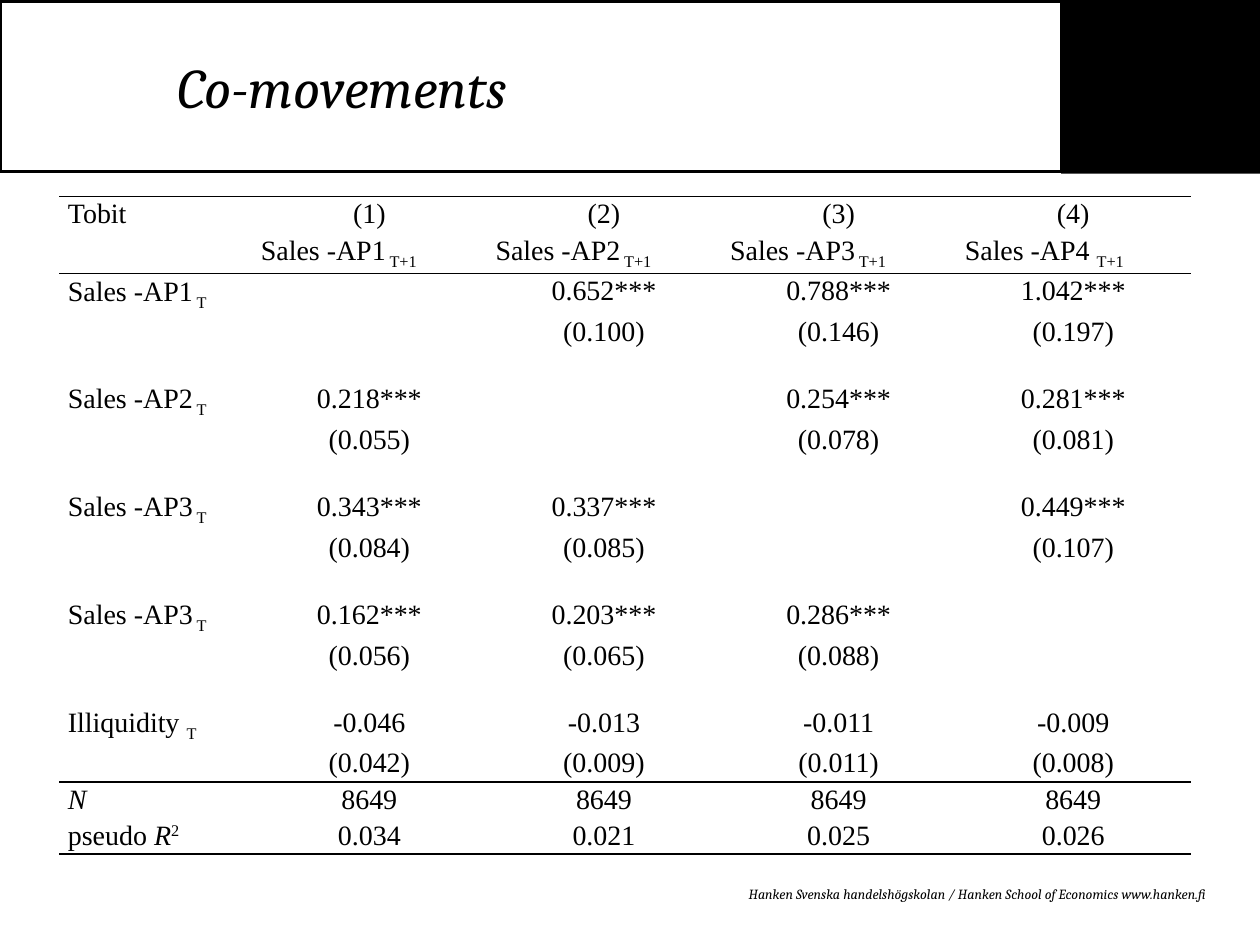
"""Build the Co-movements slide with its Tobit regression table."""
from lxml.etree import SubElement
from pptx import Presentation
from pptx.dml.color import RGBColor
from pptx.enum.shapes import MSO_SHAPE as Shape
from pptx.enum.text import MSO_ANCHOR as Anchor, PP_ALIGN as Align
from pptx.oxml import parse_xml
from pptx.oxml.ns import nsdecls, qn
from pptx.util import Cm, Pt

BLACK = "000000"
SERIF = "Times New Roman"
PLAIN_STYLE = "{2D5ABB26-0587-4C30-8999-92F81FD0307C}"
BASELINES = {"sub": "-25000", "super": "30000"}

HEADINGS = ["Tobit", "(1)", "(2)", "(3)", "(4)"]
OUTCOMES = [("Sales -AP1", " T+1"), ("Sales -AP2", " T+1"),
            ("Sales -AP3", " T+1"), ("Sales -AP4 ", "T+1")]
EFFECTS = [
    (("Sales -AP1", " T"), ["", "0.652***", "0.788***", "1.042***"],
     ["", "(0.100)", "(0.146)", "(0.197)"]),
    (("Sales -AP2", " T"), ["0.218***", "", "0.254***", "0.281***"],
     ["(0.055)", "", "(0.078)", "(0.081)"]),
    (("Sales -AP3", " T"), ["0.343***", "0.337***", "", "0.449***"],
     ["(0.084)", "(0.085)", "", "(0.107)"]),
    (("Sales -AP3", " T"), ["0.162***", "0.203***", "0.286***", ""],
     ["(0.056)", "(0.065)", "(0.088)", ""]),
    (("Illiquidity ", "T"), ["-0.046", "-0.013", "-0.011", "-0.009"],
     ["(0.042)", "(0.009)", "(0.011)", "(0.008)"]),
]
SUMMARY = [
    [[("N", "italic")], "8649", "8649", "8649", "8649"],
    [[("pseudo ", ""), ("R", "italic"), ("2", "super")],
     "0.034", "0.021", "0.025", "0.026"],
]
HEIGHTS = {"heading": 0.73, "outcome": 0.8, "effect": 0.82,
           "error": 0.73, "gap": 0.62, "summary": 0.72}


def color(code):
    return RGBColor.from_string(code)


def write(frame, text, size=16, font=SERIF, italic=False, align=Align.LEFT, spacing=None):
    para = frame.paragraphs[0]
    para.alignment = align
    para.line_spacing = spacing
    for words, style in [(text, "")] if isinstance(text, str) else text:
        span = para.add_run()
        span.text = words
        span.font.size = Pt(size)
        span.font.name = font
        span.font.italic = italic or style == "italic"
        span.font.color.rgb = color(BLACK)
        if style in BASELINES:
            span.font._element.set("baseline", BASELINES[style])


def add_box(page, text, place, anchor=Anchor.TOP, inset=None, **format):
    frame = page.shapes.add_textbox(*map(Cm, place)).text_frame
    frame.word_wrap = True
    frame.vertical_anchor = anchor
    if inset is not None:
        frame.margin_left = frame.margin_right = Cm(inset)
        frame.margin_top = frame.margin_bottom = Cm(inset)
    write(frame, text, **format)


def add_band(page, place, fill=None, line=None):
    band = page.shapes.add_shape(Shape.RECTANGLE, *map(Cm, place))
    band.shadow.inherit = False
    if fill:
        band.fill.solid()
        band.fill.fore_color.rgb = color(fill)
    else:
        band.fill.background()
    if line:
        band.line.color.rgb = color(BLACK)
        band.line.width = Pt(line)
    else:
        band.line.fill.background()


def add_borders(cell, ruled):
    props = cell._tc.get_or_add_tcPr()
    for index, side in enumerate(("lnL", "lnR", "lnT", "lnB")):
        paint = (f'<a:solidFill><a:srgbClr val="{BLACK}"/></a:solidFill>'
                 if side in ruled else "<a:noFill/>")
        props.insert(index, parse_xml(
            f'<a:{side} {nsdecls("a")} w="{Pt(1)}">{paint}</a:{side}>'))


def subscripted(pair):
    return [(pair[0], ""), (pair[1], "sub")]


def table_rows():
    rows = [("heading", HEADINGS),
            ("outcome", [""] + [subscripted(pair) for pair in OUTCOMES])]
    for label, values, errors in EFFECTS:
        rows += [("effect", [subscripted(label)] + values),
                 ("error", [""] + errors), ("gap", [""] * 5)]
    return rows[:-1] + [("summary", row) for row in SUMMARY]


def add_results(page):
    rows = table_rows()
    height = sum(HEIGHTS[kind] for kind, _ in rows)
    frame = page.shapes.add_table(len(rows), 5, Cm(1.19), Cm(3.96), Cm(22.81), Cm(height))
    table = frame.table
    table.first_row = table.horz_banding = False
    table._tbl.tblPr.find(qn("a:tableStyleId")).text = PLAIN_STYLE
    for index, column in enumerate(table.columns):
        column.width = Cm(4.73 if index else 3.89)
    ruled_edges = {0, 2, len(rows) - 2, len(rows)}
    for r, (kind, texts) in enumerate(rows):
        table.rows[r].height = Cm(HEIGHTS[kind])
        ruled = [side for side, edge in (("lnT", r), ("lnB", r + 1)) if edge in ruled_edges]
        for c, text in enumerate(texts):
            cell = table.cell(r, c)
            cell.margin_left = cell.margin_right = Cm(0.18)
            cell.margin_top = cell.margin_bottom = 0
            cell.fill.background()
            add_borders(cell, ruled)
            if text:
                centred = c > 0 and kind != "outcome"
                write(cell.text_frame, text, spacing=1.07,
                      align=Align.CENTER if centred else Align.LEFT)
            else:
                para = cell.text_frame.paragraphs[0]
                SubElement(para._p, qn("a:endParaRPr"), sz="1000")


def main():
    deck = Presentation()
    deck.slide_width, deck.slide_height = Cm(25.4), Cm(19.05)
    page = deck.slides.add_slide(deck.slide_layouts[6])
    add_band(page, (0, 0.03, 21.41, 3.43), line=2.25)
    add_band(page, (21.39, 0, 4.01, 3.5), fill=BLACK)
    add_box(page, "Co-movements", (3.58, 0.15, 16.87, 3.18), anchor=Anchor.MIDDLE,
            inset=0, size=32, font="Cambria", italic=True)
    add_box(page, "Hanken Svenska handelshögskolan / Hanken School of Economics www.hanken.fi ",
            (12.7, 17.73, 11.94, 0.61), size=8, font="Cambria", italic=True, align=Align.RIGHT)
    add_results(page)
    deck.save("out.pptx")


if __name__ == "__main__":
    main()
